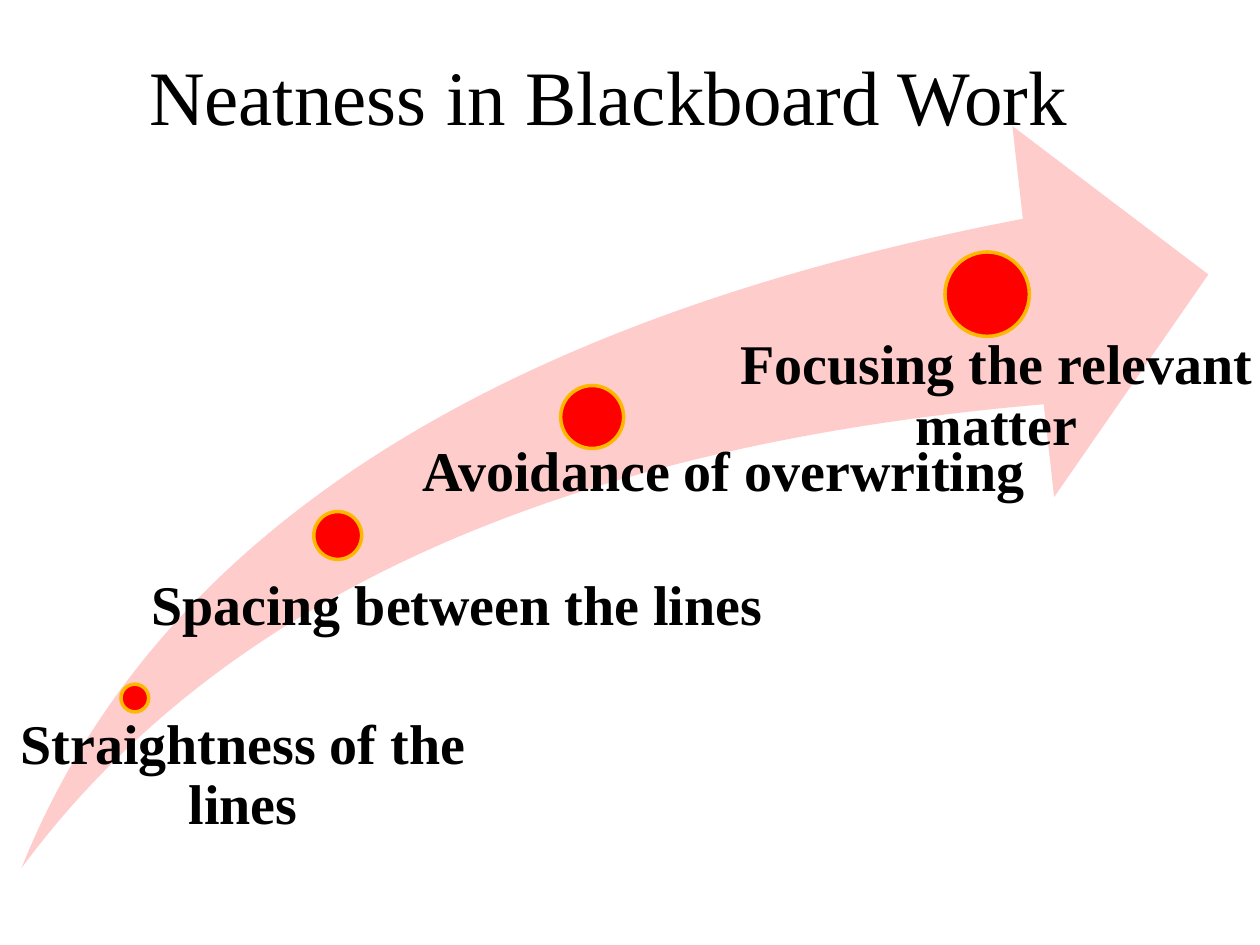
from pptx import Presentation
from pptx import util as u
from pptx.dml.color import RGBColor
from pptx.enum import shapes, text

FONT = "Times New Roman"
CENTER, LEFT = text.PP_ALIGN.CENTER, text.PP_ALIGN.LEFT

# Wording, alignment, dot (x, y, diameter), label (x, y, w, h), left inset;
# positions are measured from the corner of the arrow
STEPS = [
    ("Straightness of the lines", CENTER,
     (0.79, 4.43, 0.22), (-0.25, 4.68, 3.91, 1.13), 0.11),
    ("Spacing between the lines", LEFT,
     (2.32, 3.06, 0.38), (0.83, 3.58, 6.17, 1.01), 0.2),
    ("Avoidance of overwriting", LEFT,
     (4.28, 2.06, 0.5), (2.92, 2.52, 5.62, 0.6), 0.26),
    ("Focusing the relevant matter", CENTER,
     (7.33, 1, 0.67), (5.3, 1.67, 4.53, 0.47), 0.35),
]


def color(value):
    return RGBColor.from_string(value)


def inches(*lengths):
    return [u.Inches(length) for length in lengths]


def write(frame, wording, size, align, bold=False):
    frame.word_wrap = True
    para = frame.paragraphs[0]
    para.text = wording
    para.alignment = align
    para.font.name = FONT
    para.font.size = u.Pt(size)
    para.font.bold = bold
    para.font.color.rgb = color("000000")
    return para


def add_title(page, box, wording):
    title = page.shapes.title
    title.left, title.top, title.width, title.height = inches(*box)
    title.text_frame.vertical_anchor = text.MSO_ANCHOR.BOTTOM
    write(title.text_frame, wording, 44, CENTER)


def add_filled(group, kind, box, fill, line=None):
    shape = group.shapes.add_shape(kind, *inches(*box))
    shape.shadow.inherit = False
    shape.fill.solid()
    shape.fill.fore_color.rgb = color(fill)
    if line:
        shape.line.color.rgb = color(line)
        shape.line.width = u.Pt(2)
    else:
        shape.line.fill.background()
    return shape


def add_label(group, box, wording, align, inset):
    frame = group.shapes.add_textbox(*inches(*box)).text_frame
    frame.margin_left = u.Inches(inset)
    frame.margin_top = frame.margin_right = frame.margin_bottom = 0
    write(frame, wording, 32, align, bold=True).line_spacing = 0.9


def add_rising_arrow(page, box, steps):
    left, top = box[:2]
    group = page.shapes.add_group_shape()

    # Arrow behind the steps
    arrow = add_filled(group, shapes.MSO_SHAPE.SWOOSH_ARROW, box, "FFCCCC")
    arrow.adjustments[0] = 0.25
    arrow.adjustments[1] = 0.25

    # Growing dots, each with its label
    for wording, align, (dot_x, dot_y, size), (x, y, width, height), inset in steps:
        add_filled(group, shapes.MSO_SHAPE.OVAL,
                   (left + dot_x, top + dot_y, size, size), "FF0000", "FFB800")
        add_label(group, (left + x, top + y, width, height), wording, align, inset)


def main():
    deck = Presentation()
    deck.slide_width, deck.slide_height = inches(10, 7.5)
    page = deck.slides.add_slide(deck.slide_layouts[5])
    add_title(page, (0.33, 0.17, 9, 1), "Neatness in Blackboard Work")
    add_rising_arrow(page, (0.17, 1, 9.42, 5.89), STEPS)
    deck.save("out.pptx")


if __name__ == "__main__":
    main()
